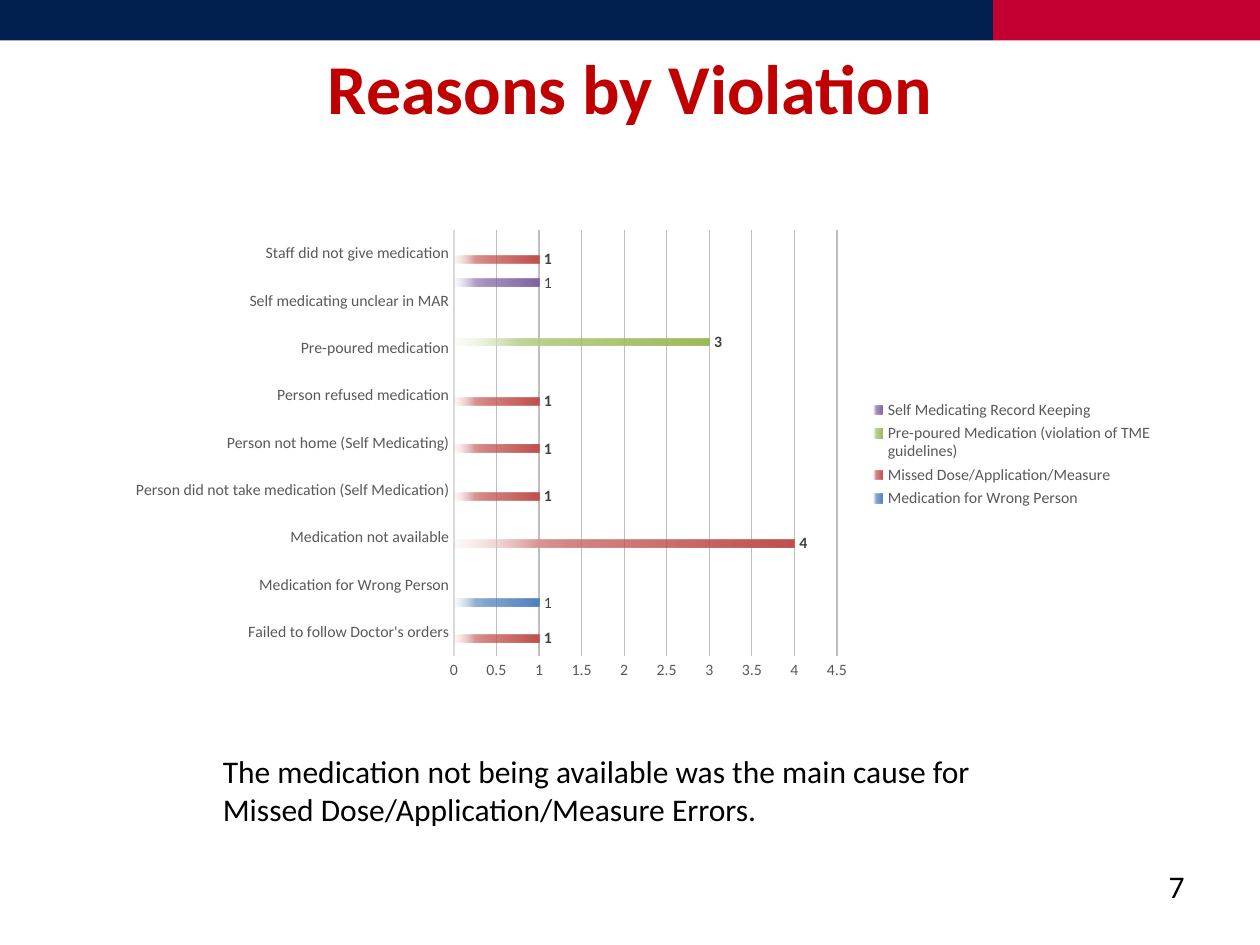
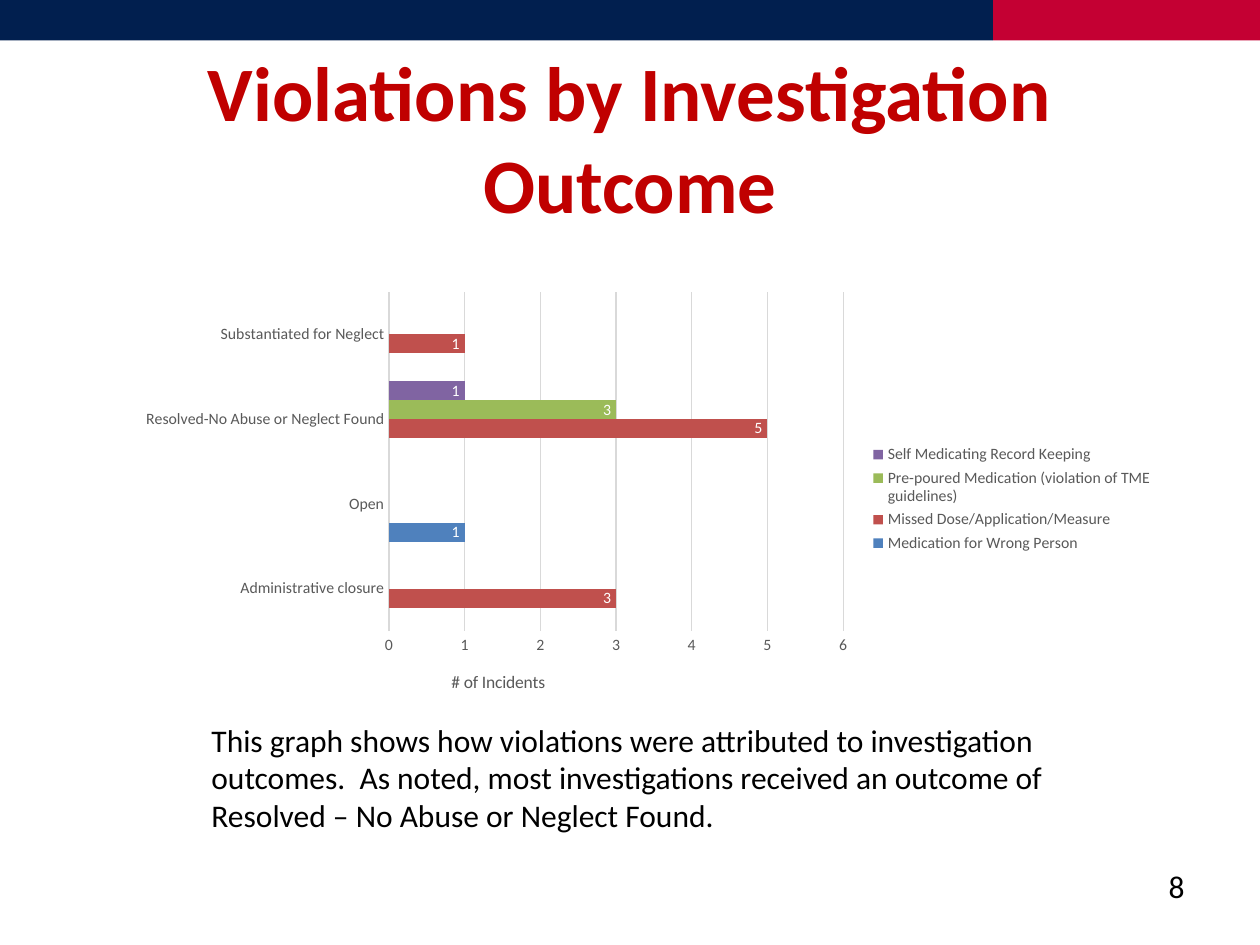
from dataclasses import dataclass

import pptx
import pptx.chart.data
import pptx.dml.color
import pptx.enum.chart
import pptx.enum.shapes
import pptx.enum.text
import pptx.oxml
import pptx.oxml.ns
import pptx.util

Inches, Pt = pptx.util.Inches, pptx.util.Pt
PP_ALIGN = pptx.enum.text.PP_ALIGN
LABEL_POSITION = pptx.enum.chart.XL_LABEL_POSITION


@dataclass(frozen=True)
class Theme:
    font: str = "Calibri"
    navy: str = "011F4F"
    crimson: str = "C40033"
    title: str = "C00000"
    text: str = "000000"
    axis_text: str = "595959"
    label_dark: str = "404040"
    label_light: str = "FFFFFF"
    grid_dark: str = "BFBFBF"
    grid_light: str = "D9D9D9"
    body_size: float = 18
    axis_title_size: float = 10
    chart_size: float = 9


THEME = Theme()
TITLE_ONLY = 5

# Each violation: solid colour, mid tint and pale tint
VIOLATIONS = {
    "Medication for Wrong Person": ("4F81BD", "95B3D7", "DCE6F2"),
    "Missed Dose/Application/Measure": ("C0504D", "D99694", "F2DCDB"),
    "Pre-poured Medication (violation of TME guidelines)": ("9BBB59", "C3D69B", "EBF1DE"),
    "Self Medicating Record Keeping": ("8064A2", "B3A2C7", "E6E0EC"),
}

REASONS = [
    "Failed to follow Doctor's orders",
    "Medication for Wrong Person",
    "Medication not available",
    "Person did not take medication (Self Medication)",
    "Person not home (Self Medicating)",
    "Person refused medication",
    "Pre-poured medication",
    "Self medicating unclear in MAR",
    "Staff did not give medication",
]
# Incidents per violation, as {category index: count}
REASON_COUNTS = [{1: 1}, {0: 1, 2: 4, 3: 1, 4: 1, 5: 1, 8: 1}, {6: 3}, {7: 1}]

OUTCOMES = [
    "Administrative closure",
    "Open",
    "Resolved-No Abuse or Neglect Found",
    "Substantiated for Neglect",
]
OUTCOME_COUNTS = [{1: 1}, {0: 3, 2: 5, 3: 1}, {2: 3}, {2: 1}]


def rgb(code):
    return pptx.dml.color.RGBColor.from_string(code)


def style_font(font, size, color, bold=False):
    font.name = THEME.font
    font.size = Pt(size)
    font.bold = bold
    font.color.rgb = rgb(color)


def add_band(slide, left, width, color):
    band = slide.shapes.add_shape(
        pptx.enum.shapes.MSO_SHAPE.RECTANGLE,
        Inches(left), 0, Inches(width), Inches(0.32))
    band.shadow.inherit = False
    band.fill.solid()
    band.fill.fore_color.rgb = rgb(color)
    band.line.fill.background()


def add_text(slide, text, left, top, width, height, align=PP_ALIGN.LEFT):
    box = slide.shapes.add_textbox(
        Inches(left), Inches(top), Inches(width), Inches(height))
    box.text_frame.word_wrap = True
    paragraph = box.text_frame.paragraphs[0]
    paragraph.text = text
    paragraph.alignment = align
    style_font(paragraph.font, THEME.body_size, THEME.text)


def set_title(slide, text, height, size):
    title = slide.shapes.title
    title.left, title.top = Inches(0.5), Inches(0.3)
    title.width, title.height = Inches(9), Inches(height)
    frame = title.text_frame
    frame.text = text
    frame.word_wrap = True
    frame.auto_size = pptx.enum.text.MSO_AUTO_SIZE.NONE
    frame.vertical_anchor = pptx.enum.text.MSO_ANCHOR.TOP
    paragraph = frame.paragraphs[0]
    paragraph.alignment = PP_ALIGN.CENTER
    style_font(paragraph.font, size, THEME.title, bold=True)


def add_report_slide(deck, title, title_height, title_size, number):
    slide = deck.slides.add_slide(deck.slide_layouts[TITLE_ONLY])
    add_band(slide, 7.88, 2.12, THEME.crimson)
    add_band(slide, 0, 7.88, THEME.navy)
    set_title(slide, title, title_height, title_size)
    add_text(slide, str(number), 7.17, 6.83, 2.33, 0.5, PP_ALIGN.RIGHT)
    return slide


def set_layout(parent, **fractions):
    """Place a plot area or chart title by fractions of the chart (x, y, w, h)."""
    for automatic in parent.xpath("c:layout"):
        parent.remove(automatic)
    target = '<c:layoutTarget val="inner"/>' if "w" in fractions else ""
    modes = '<c:xMode val="edge"/><c:yMode val="edge"/>'
    places = "".join(f'<c:{key} val="{value}"/>' for key, value in fractions.items())
    layout = pptx.oxml.parse_xml(
        f'<c:layout {pptx.oxml.ns.nsdecls("c")}><c:manualLayout>'
        f"{target}{modes}{places}</c:manualLayout></c:layout>")
    parent.insert(len(parent.xpath("c:tx")), layout)


def fade_bar(series, solid, mid, pale):
    """Fill the bars with a gradient that fades out towards the axis."""
    fill = series.format.fill
    fill.gradient()
    fill.gradient_angle = 180
    stops = series._element.xpath(".//a:gsLst")[0]
    for stop in list(stops):
        stops.remove(stop)
    for position, color, opacity in (
            (0, solid, 100), (51, solid, 75), (75, mid, 100), (100, pale, 15)):
        stops.append(pptx.oxml.parse_xml(
            f'<a:gs {pptx.oxml.ns.nsdecls("a")} pos="{position * 1000}">'
            f'<a:srgbClr val="{color}"><a:alpha val="{opacity * 1000}"/>'
            "</a:srgbClr></a:gs>"))


def style_axes(chart, maximum, unit, grid_color, base_width):
    for axis in (chart.category_axis, chart.value_axis):
        axis.major_tick_mark = pptx.enum.chart.XL_TICK_MARK.NONE
        axis.minor_tick_mark = pptx.enum.chart.XL_TICK_MARK.NONE
        style_font(axis.tick_labels.font, THEME.chart_size, THEME.axis_text)
    base_line = chart.category_axis.format.line
    base_line.color.rgb = rgb(THEME.grid_light)
    base_line.width = Pt(base_width)

    values = chart.value_axis
    values.minimum_scale, values.maximum_scale = 0, maximum
    values.major_unit = unit
    values.format.line.fill.background()
    values.has_major_gridlines = True
    grid_line = values.major_gridlines.format.line
    grid_line.color.rgb = rgb(grid_color)
    grid_line.width = Pt(0.75)


def style_labels(series, position, color, bold=False):
    labels = series.data_labels
    labels.show_value = True
    labels.position = position
    style_font(labels.font, THEME.chart_size, color, bold)


def add_violation_chart(slide, categories, counts, left, top, width, height, overlap):
    """Add a clustered bar chart with one series for each kind of violation."""
    data = pptx.chart.data.CategoryChartData()
    data.categories = categories
    for violation, found in zip(VIOLATIONS, counts):
        data.add_series(violation, [found.get(i) for i in range(len(categories))])
    chart = slide.shapes.add_chart(
        pptx.enum.chart.XL_CHART_TYPE.BAR_CLUSTERED,
        Inches(left), Inches(top), Inches(width), Inches(height), data).chart
    style_font(chart.font, THEME.chart_size, THEME.text)
    chart.has_title = False
    chart.has_legend = True
    chart.legend.position = pptx.enum.chart.XL_LEGEND_POSITION.RIGHT
    chart.legend.include_in_layout = False
    style_font(chart.legend.font, THEME.chart_size, THEME.axis_text)
    bars = chart.plots[0]
    bars.vary_by_categories = False
    bars.gap_width = 50
    bars.overlap = overlap
    return chart


def set_value_title(chart, text, x, y):
    axis_title = chart.value_axis.axis_title
    paragraph = axis_title.text_frame.paragraphs[0]
    paragraph.text = text
    style_font(paragraph.font, THEME.axis_title_size, THEME.axis_text)
    set_layout(axis_title._element, x=x, y=y)


def build_reasons_slide(deck):
    slide = add_report_slide(deck, "Reasons by Violation", 1.25, 40, 7)
    chart = add_violation_chart(
        slide, REASONS, REASON_COUNTS, 0.92, 1.75, 8.33, 3.71, overlap=-58)
    set_layout(chart._chartSpace.chart.plotArea, x=0.322, y=0.02, w=0.365, h=0.912)
    style_axes(chart, 4.5, 0.5, THEME.grid_dark, base_width=1.5)
    for series, tints, bold in zip(
            chart.plots[0].series, VIOLATIONS.values(), (False, True, True, False)):
        fade_bar(series, *tints)
        style_labels(series, LABEL_POSITION.OUTSIDE_END, THEME.label_dark, bold)
    add_text(
        slide,
        "The medication not being available was the main cause for "
        "Missed Dose/Application/Measure Errors.",
        1.67, 5.92, 6.58, 0.71)


def build_outcomes_slide(deck):
    slide = add_report_slide(deck, "Violations by Investigation Outcome", 1.7, 44, 8)
    chart = add_violation_chart(
        slide, OUTCOMES, OUTCOME_COUNTS, 1, 2.25, 8.25, 3.42, overlap=0)
    set_layout(chart._chartSpace.chart.plotArea, x=0.253, y=0.02, w=0.437, h=0.787)
    style_axes(chart, 6, 1, THEME.grid_light, base_width=0.75)
    set_value_title(chart, "# of Incidents", x=0.31, y=0.89)
    for series, (solid, *_) in zip(chart.plots[0].series, VIOLATIONS.values()):
        series.format.fill.solid()
        series.format.fill.fore_color.rgb = rgb(solid)
        style_labels(series, LABEL_POSITION.INSIDE_END, THEME.label_light)
    add_text(
        slide,
        "This graph shows how violations were attributed to investigation "
        "outcomes.  As noted, most investigations received an outcome of "
        "Resolved – No Abuse or Neglect Found.",
        1.58, 5.67, 7, 1.01)


def main():
    deck = pptx.Presentation()
    deck.slide_width, deck.slide_height = Inches(10), Inches(7.5)
    build_reasons_slide(deck)
    build_outcomes_slide(deck)
    deck.save("out.pptx")


if __name__ == "__main__":
    main()
